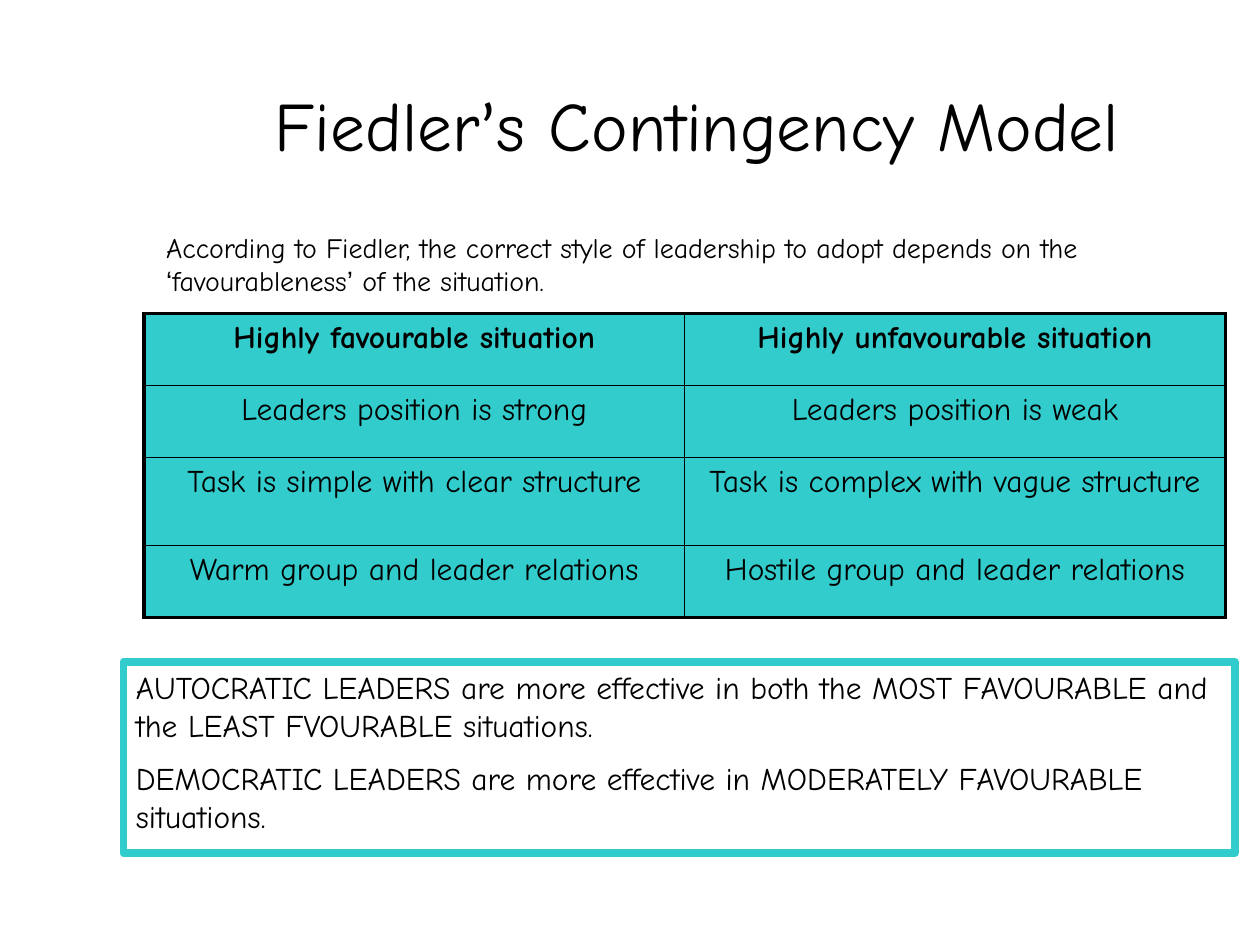
import itertools
from dataclasses import dataclass

import lxml.etree
import pptx
import pptx.dml.color
import pptx.enum.shapes
import pptx.enum.text
import pptx.oxml.ns
import pptx.util

Cm = pptx.util.Cm
Pt = pptx.util.Pt
RGB = pptx.dml.color.RGBColor
Align = pptx.enum.text.PP_ALIGN
Anchor = pptx.enum.text.MSO_ANCHOR


@dataclass(frozen=True)
class Theme:
    font: str = "Comic Neue"
    ink: str = "000000"
    turquoise: str = "33CCCC"
    title_size: float = 39.6
    intro_size: float = 16
    body_size: float = 18
    paragraph_gap: float = 9
    outer_border: float = 2.25
    inner_border: float = 1
    frame_line: float = 4.5


class SlideBuilder:
    def __init__(self, slide, theme):
        self.slide = slide
        self.theme = theme

    def set_text(self, frame, paragraphs, size, align=Align.LEFT, bold=False, quote_font=None):
        frame.word_wrap = True
        for index, wording in enumerate(paragraphs):
            paragraph = frame.paragraphs[0] if index == 0 else frame.add_paragraph()
            paragraph.alignment = align
            if index:
                paragraph.space_before = Pt(self.theme.paragraph_gap)
            for is_quote, letters in itertools.groupby(wording, lambda letter: letter in "‘’"):
                run = paragraph.add_run()
                run.text = "".join(letters)
                run.font.name = quote_font if is_quote and quote_font else self.theme.font
                run.font.size = Pt(size)
                run.font.bold = bold
                run.font.color.rgb = RGB.from_string(self.theme.ink)

    def text(self, box, wording, size, anchor=Anchor.TOP, **style):
        frame = self.slide.shapes.add_textbox(*map(Cm, box)).text_frame
        frame.vertical_anchor = anchor
        self.set_text(frame, [wording], size, **style)

    def framed_text(self, box, paragraphs):
        panel = self.slide.shapes.add_shape(
            pptx.enum.shapes.MSO_SHAPE.RECTANGLE, *map(Cm, box))
        panel.shadow.inherit = False
        panel.fill.background()
        panel.line.color.rgb = RGB.from_string(self.theme.turquoise)
        panel.line.width = Pt(self.theme.frame_line)
        panel.text_frame.vertical_anchor = Anchor.TOP
        self.set_text(panel.text_frame, paragraphs, self.theme.body_size)

    def border(self, cell, side, width):
        qn = pptx.oxml.ns.qn
        properties = cell._tc.get_or_add_tcPr()
        line = lxml.etree.SubElement(properties, qn(f"a:ln{side}"), w=str(Pt(width)))
        fill = lxml.etree.SubElement(line, qn("a:solidFill"))
        lxml.etree.SubElement(fill, qn("a:srgbClr"), val=self.theme.ink)

    def table(self, left, top, width, row_heights, rows):
        columns = len(rows[0])
        table = self.slide.shapes.add_table(
            len(rows), columns, Cm(left), Cm(top), Cm(width), Cm(sum(row_heights))).table
        table.first_row = table.horz_banding = False
        for row, height in zip(table.rows, row_heights):
            row.height = Cm(height)
        for r, row in enumerate(rows):
            for c, wording in enumerate(row):
                cell = table.cell(r, c)
                outer_sides = {"L": c == 0, "R": c == columns - 1,
                               "T": r == 0, "B": r == len(rows) - 1}
                for side, is_outer in outer_sides.items():
                    self.border(cell, side, self.theme.outer_border if is_outer
                                else self.theme.inner_border)
                cell.fill.solid()
                cell.fill.fore_color.rgb = RGB.from_string(self.theme.turquoise)
                self.set_text(cell.text_frame, [wording], self.theme.body_size,
                              align=Align.CENTER, bold=r == 0)


def main():
    theme = Theme()
    deck = pptx.Presentation()
    deck.slide_width, deck.slide_height = Cm(25.4), Cm(19.05)
    builder = SlideBuilder(deck.slides.add_slide(deck.slide_layouts[6]), theme)

    builder.text((3.89, 0.91, 20.32, 3.18), "Fiedler’s Contingency Model", theme.title_size,
                 anchor=Anchor.MIDDLE, align=Align.CENTER, quote_font="Calibri")
    builder.text((3.1, 4.52, 21.79, 1.63),
                 "According to Fiedler, the correct style of leadership to adopt depends on the "
                 "‘favourableness’ of the situation.",
                 theme.intro_size, quote_font="Arial")
    builder.table(2.9, 6.32, 21.8, [1.45, 1.45, 1.78, 1.45], [
        ("Highly favourable situation", "Highly unfavourable situation"),
        ("Leaders position is strong", "Leaders position is weak"),
        ("Task is simple with clear structure", "Task is complex with vague structure"),
        ("Warm group and leader relations", "Hostile group and leader relations"),
    ])
    builder.framed_text((2.49, 13.34, 22.4, 3.86), [
        "AUTOCRATIC LEADERS are more effective in both the MOST FAVOURABLE and "
        "the LEAST FVOURABLE situations.",
        "DEMOCRATIC LEADERS are more effective in MODERATELY FAVOURABLE situations.",
    ])
    deck.save("out.pptx")


if __name__ == "__main__":
    main()
